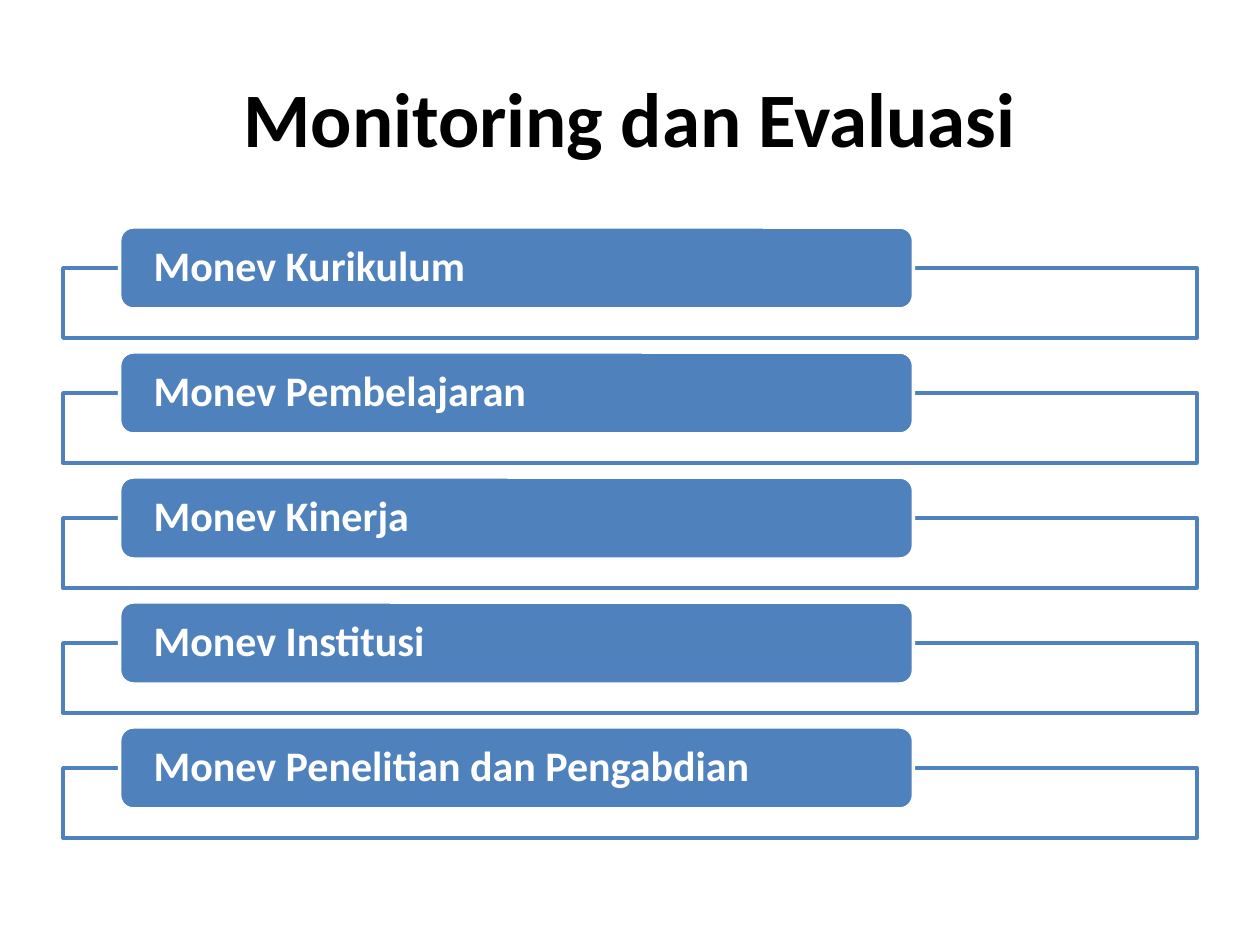
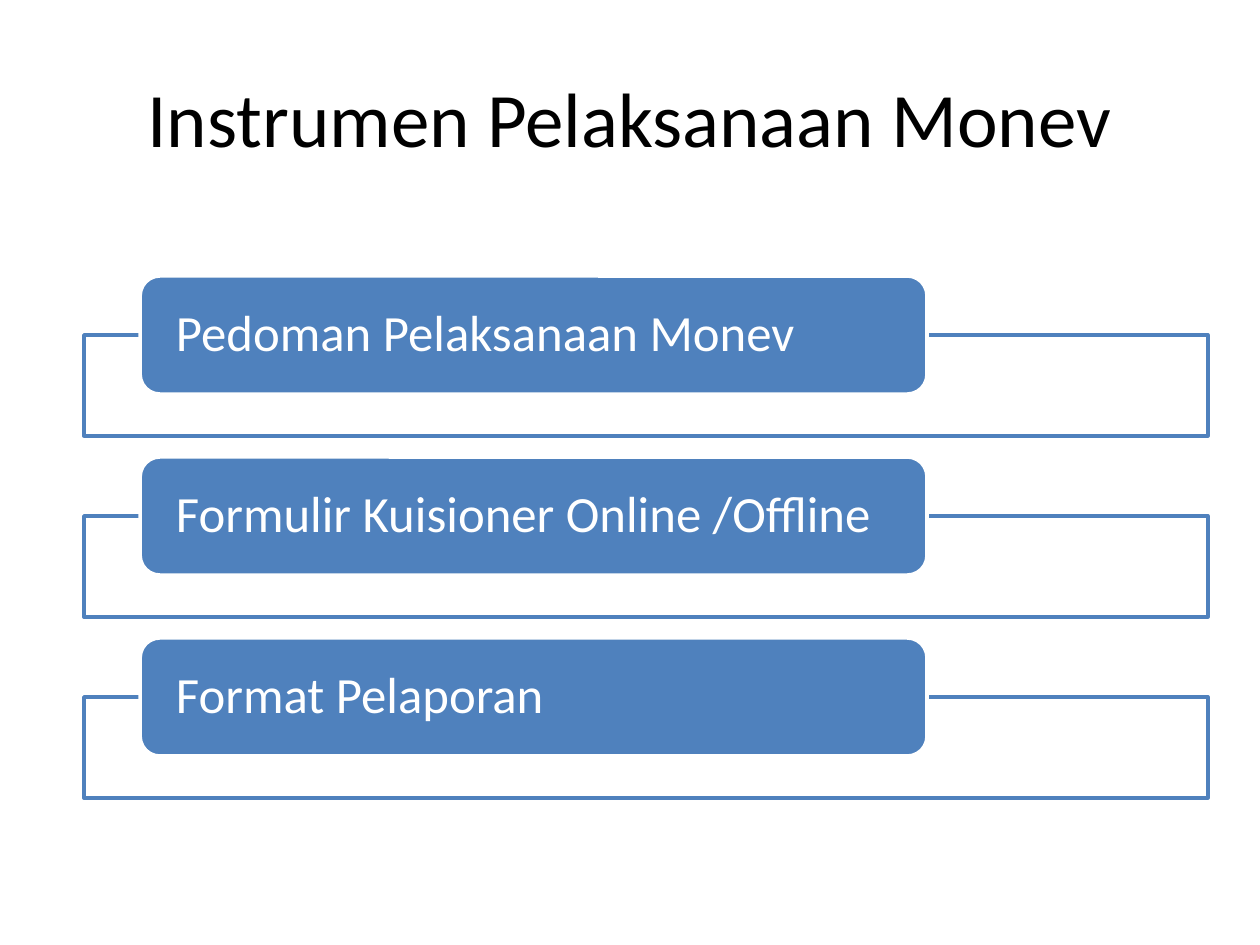
from dataclasses import dataclass

import pptx
import pptx.dml.color
import pptx.enum.shapes
import pptx.enum.text
import pptx.oxml.ns
import pptx.util
from lxml import etree

PX_PER_INCH = 126
BLUE = pptx.dml.color.RGBColor(0x4F, 0x81, 0xBD)
WHITE = pptx.dml.color.RGBColor(0xFF, 0xFF, 0xFF)
BLACK = pptx.dml.color.RGBColor(0x00, 0x00, 0x00)
FONT = "Calibri"
TITLE_ONLY = 5
LABEL_INDENT = 0.05
LABEL_SHARE = 0.7


@dataclass
class ListStyle:
    left: int
    top: int
    width: int
    frame_height: int
    label_height: int
    pitch: int
    text_size: int
    bold: bool


MONEV_STYLE = ListStyle(63, 268, 1134, 70, 82, 125, 24, True)
INSTRUMENT_STYLE = ListStyle(84, 335, 1124, 101, 118, 181, 29, False)


def px(length):
    return pptx.util.Emu(round(length * 914400 / PX_PER_INCH))


def format_text(text_frame, size, color, bold, alignment):
    text_frame.word_wrap = True
    text_frame.vertical_anchor = pptx.enum.text.MSO_ANCHOR.MIDDLE
    for paragraph in text_frame.paragraphs:
        paragraph.alignment = alignment
        for run in paragraph.runs:
            run.font.name = FONT
            run.font.size = pptx.util.Pt(size)
            run.font.bold = bold
            run.font.color.rgb = color


def add_titled_slide(prs, text, bold):
    slide = prs.slides.add_slide(prs.slide_layouts[TITLE_ONLY])
    title = slide.shapes.title
    title.left, title.top, title.width, title.height = map(px, (63, 38, 1134, 157))
    title.text_frame.text = text
    format_text(title.text_frame, 44, BLACK, bold, pptx.enum.text.PP_ALIGN.CENTER)
    return slide


def add_box(slide, preset, left, top, width, height, fill, line):
    box = slide.shapes.add_shape(preset, px(left), px(top), px(width), px(height))
    box.shadow.inherit = False
    box.fill.solid()
    box.fill.fore_color.rgb = fill
    box.line.color.rgb = line
    box.line.width = pptx.util.Pt(2)
    return box


def add_frame(slide, style, top):
    frame = add_box(slide, pptx.enum.shapes.MSO_SHAPE.RECTANGLE, style.left, top,
                    style.width, style.frame_height, WHITE, BLUE)
    qn = pptx.oxml.ns.qn
    fill_color = frame.fill._xPr.find(qn("a:solidFill")).find(qn("a:srgbClr"))
    etree.SubElement(fill_color, qn("a:alpha"), val="90000")


def add_label(slide, style, top, text):
    label = add_box(slide, pptx.enum.shapes.MSO_SHAPE.ROUNDED_RECTANGLE,
                    style.left + LABEL_INDENT * style.width,
                    top - style.label_height / 2,
                    LABEL_SHARE * style.width, style.label_height, BLUE, WHITE)
    text_frame = label.text_frame
    text_frame.text = text
    text_frame.margin_left = text_frame.margin_right = px(30)
    text_frame.margin_top = text_frame.margin_bottom = 0
    text_frame.paragraphs[0].line_spacing = 0.9
    format_text(text_frame, style.text_size, WHITE, style.bold,
                pptx.enum.text.PP_ALIGN.LEFT)


def add_framed_list(slide, style, items):
    for index, item in enumerate(items):
        top = style.top + index * style.pitch
        add_frame(slide, style, top)
        add_label(slide, style, top, item)


def main():
    prs = pptx.Presentation()
    prs.slide_width, prs.slide_height = px(1260), px(945)

    monev = add_titled_slide(prs, "Monitoring dan Evaluasi", True)
    add_framed_list(monev, MONEV_STYLE, [
        "Monev Kurikulum",
        "Monev Pembelajaran",
        "Monev Kinerja",
        "Monev Institusi",
        "Monev Penelitian dan Pengabdian",
    ])

    instruments = add_titled_slide(prs, "Instrumen Pelaksanaan Monev", False)
    add_framed_list(instruments, INSTRUMENT_STYLE, [
        "Pedoman Pelaksanaan Monev",
        "Formulir Kuisioner Online /Offline",
        "Format Pelaporan",
    ])

    prs.save("out.pptx")


if __name__ == "__main__":
    main()
